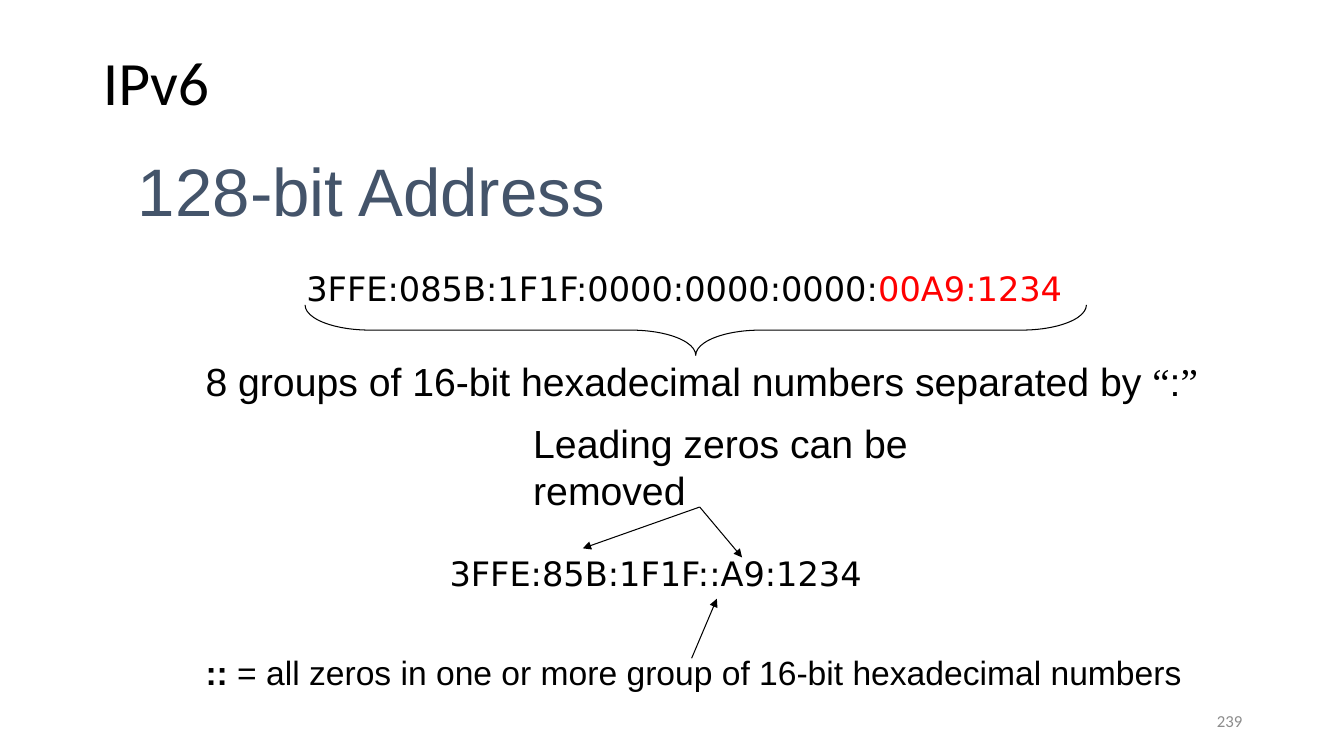
from lxml import etree
from pptx import Presentation
from pptx.dml.color import RGBColor
from pptx.enum.shapes import MSO_CONNECTOR, MSO_SHAPE
from pptx.enum.text import MSO_ANCHOR, PP_ALIGN
from pptx.oxml.ns import qn
from pptx.util import Inches, Pt

TOP, MIDDLE = MSO_ANCHOR.TOP, MSO_ANCHOR.MIDDLE
LEFT, RIGHT = PP_ALIGN.LEFT, PP_ALIGN.RIGHT
STRAIGHT, BRACE = MSO_CONNECTOR.STRAIGHT, MSO_SHAPE.RIGHT_BRACE

BLACK, RED, SLATE, GREY = "000000", "FF0000", "44546A", "8C8C8C"
SANS, MONO, SERIF, BODY = "Arial", "DejaVu Sans", "Times New Roman", "Calibri"

# Runs are (text, font, colour, bold)
TITLE = [("IPv6", BODY, BLACK, False)]
TITLE_BOX = (0.92, 0.4, 11.5, 0.89)

# (left, top, width, height), size, anchor, alignment, line spacing, runs
TEXTS = [
    ((9.42, 6.95, 3, 0.4), 12, MIDDLE, RIGHT, 1.0,
     [("239", BODY, GREY, False)]),
    ((1.27, 1.33, 8.5, 1.25), 48, MIDDLE, LEFT, 0.8,
     [("128-bit Address", SANS, SLATE, False)]),
    ((2.94, 2.61, 7.98, 0.5), 24, TOP, LEFT, 1.0,
     [("3FFE:085B:1F1F:0000:0000:0000:", MONO, BLACK, False),
      ("00A9:1234", MONO, RED, False)]),
    ((1.94, 3.5, 10.1, 0.57), 28, TOP, LEFT, 1.0,
     [("8 groups of 16-bit hexadecimal numbers separated by ", SANS, BLACK, False),
      ("“", SERIF, BLACK, False),
      (":", SANS, BLACK, False),
      ("”", SERIF, BLACK, False)]),
    ((4.36, 5.44, 4.51, 0.5), 24, TOP, LEFT, 1.0,
     [("3FFE:85B:1F1F::A9:1234", MONO, BLACK, False)]),
    ((1.94, 6.42, 10, 0.5), 24, TOP, LEFT, 1.0,
     [("::", SANS, BLACK, True),
      (" = all zeros in one or more group of 16-bit hexadecimal numbers",
       SANS, BLACK, False)]),
    ((5.19, 4.11, 4.1, 1.5), 28, TOP, LEFT, 1.0,
     [("Leading zeros can be removed", SANS, BLACK, False)]),
]

BRACE_BOX = (6.65, -0.6, 0.5, 7.75)  # before the quarter turn
LEADING_ZEROS = (6.94, 5.03)
ARROWS = [
    (LEADING_ZEROS, (5.78, 5.44)),
    (LEADING_ZEROS, (7.36, 5.53)),
    ((6.86, 6.53), (7.11, 5.94)),
]


def rgb(value):
    return RGBColor.from_string(value)


def inches(values):
    return [Inches(v) for v in values]


def write(sp, size, anchor, align, spacing, runs):
    tf = sp.text_frame
    tf.word_wrap = True
    tf.vertical_anchor = anchor
    p = tf.paragraphs[0]
    p.alignment = align
    p.line_spacing = spacing
    for text, font, color, bold in runs:
        r = p.add_run()
        r.text = text
        r.font.name = font
        r.font.size = Pt(size)
        r.font.bold = bold
        r.font.color.rgb = rgb(color)


def thin_line(sp):
    sp.line.color.rgb = rgb(BLACK)
    sp.line.width = Pt(0.75)


def add_arrow(s, start, end):
    cx = s.shapes.add_connector(STRAIGHT, *inches(start + end))
    thin_line(cx)
    etree.SubElement(cx.line._get_or_add_ln(), qn("a:tailEnd"), type="triangle")
    etree.SubElement(cx._element.spPr, qn("a:effectLst"))


def main():
    prs = Presentation()
    prs.slide_width, prs.slide_height = inches((13.33, 7.5))
    s = prs.slides.add_slide(prs.slide_layouts[5])

    title = s.shapes.title
    title.left, title.top, title.width, title.height = inches(TITLE_BOX)
    write(title, 44, MIDDLE, LEFT, 0.9, TITLE)

    for box, *style in TEXTS:
        write(s.shapes.add_textbox(*inches(box)), *style)

    brace = s.shapes.add_shape(BRACE, *inches(BRACE_BOX))
    brace.rotation = 90
    brace.adjustments[0] = 1.29
    brace.adjustments[1] = 0.5
    brace.shadow.inherit = False
    brace.fill.background()
    thin_line(brace)

    for start, end in ARROWS:
        add_arrow(s, start, end)

    prs.save("out.pptx")


if __name__ == "__main__":
    main()
